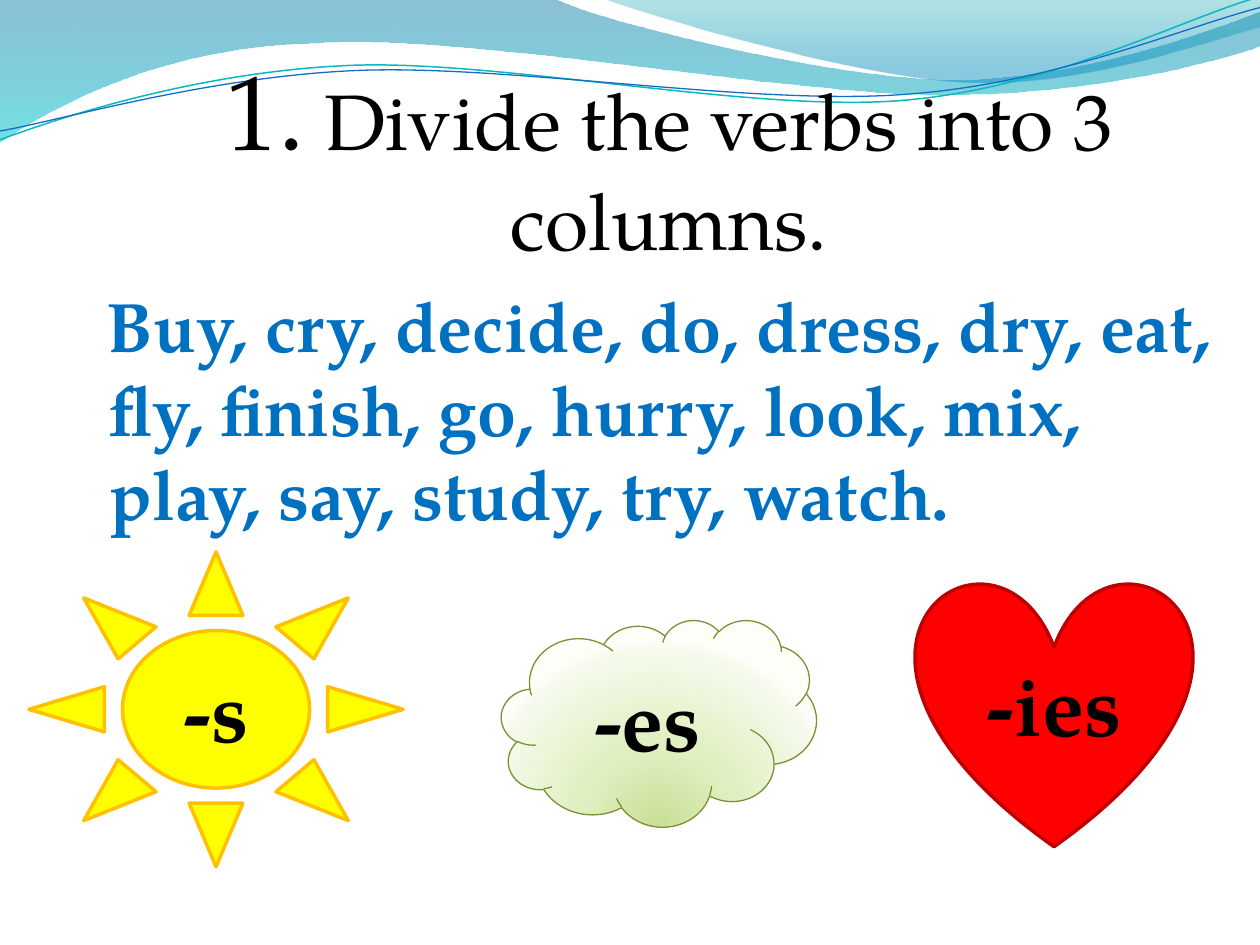
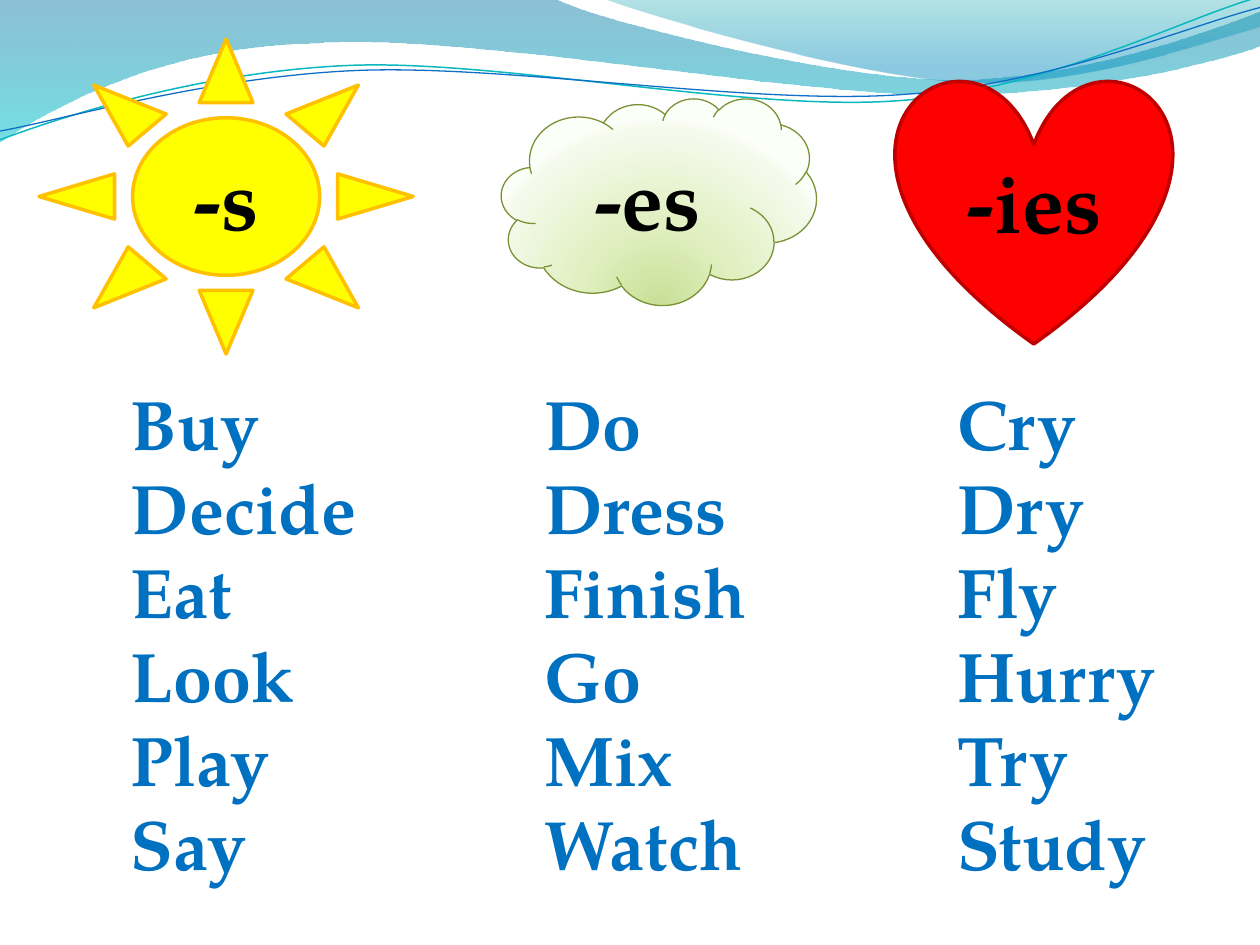
import pptx
import pptx.util
import pptx.dml.color
import pptx.enum.shapes
import pptx.enum.text
import pptx.oxml
import pptx.oxml.ns

RGB = pptx.dml.color.RGBColor
SHAPE = pptx.enum.shapes.MSO_SHAPE
ALIGN = pptx.enum.text.PP_ALIGN
ANCHOR = pptx.enum.text.MSO_ANCHOR
AUTO_SIZE = pptx.enum.text.MSO_AUTO_SIZE
NS = pptx.oxml.ns.nsdecls("a")
qn = pptx.oxml.ns.qn

PX = 9144
FONT = "TeX Gyre Pagella"
BLACK = RGB(0x00, 0x00, 0x00)
VERB_BLUE = RGB(0x00, 0x70, 0xC0)
SUN_YELLOW = RGB(0xFF, 0xFF, 0x00)
SUN_EDGE = RGB(0xFF, 0xC0, 0x00)
HEART_RED = RGB(0xFF, 0x00, 0x00)
HEART_EDGE = RGB(0xC0, 0x00, 0x00)
CLOUD_EDGE = RGB(0x7B, 0x91, 0x35)
TEAL_LINE = RGB(0x0A, 0xB8, 0xBF)
BLUE_LINE = RGB(0x0F, 0x6F, 0xC6)

LINEAR = '<a:lin ang="5400000" scaled="0"/>'
RADIAL = ('<a:path path="circle"><a:fillToRect l="50000" t="130000" '
          'r="50000" b="-30000"/></a:path>')
CLOUD_STOPS = [
    (0, RGB(0xC9, 0xDF, 0x97), 100),
    (43, RGB(0xE0, 0xF0, 0xC1), 100),
    (93, RGB(0xF5, 0xFA, 0xEC), 100),
    (100, RGB(0xFC, 0xFE, 0xF8), 100),
]

BANDS = [
    ([(0, 0), (440, -1), (476, 17, 664, 63, 758, 63),
      (853, 63, 958, 26, 1000, 9), (1001, 36),
      (983, 44, 870, 76, 746, 75), (622, 75, 382, 28, 257, 34),
      (129, 36, 46, 83, -1, 113)],
     [(0, RGB(0x00, 0x74, 0xA1), 45), (100, RGB(0x00, 0xC6, 0xCF), 55)]),
    ([(479, -1), (509, 11, 682, 62, 769, 65),
      (856, 69, 961, 32, 1000, 21), (1000, 0)],
     [(0, RGB(0x00, 0xA1, 0xA9), 30), (80, RGB(0x00, 0x8B, 0xBF), 45)]),
]
STRANDS = [
    ([(0, 111), (48, 93, 158, 57, 277, 52), (395, 47, 593, 89, 713, 80),
      (833, 71, 938, 15, 998, -2)], TEAL_LINE, 0.85),
    ([(0, 104), (47, 96, 164, 61, 283, 56), (403, 51, 597, 84, 717, 75),
      (836, 67, 941, 21, 1000, 6)], BLUE_LINE, 0.75),
]

VERBS = "Buy, cry, decide, do, dress, dry, eat, fly, finish, go, hurry, look, mix, play, say, study, try, watch."
COLUMNS = [
    (273, ["Buy", "Decide", "Eat", "Look", "Play", "Say"]),
    (234, ["Do", "Dress", "Finish", "Go", "Mix", "Watch"]),
    (203, ["Cry", "Dry", "Fly", "Hurry", "Try", "Study"]),
]


class Deck:
    def __init__(self):
        self.prs = pptx.Presentation()
        self.prs.slide_width = 1000 * PX
        self.prs.slide_height = 750 * PX
        self.layout = self.prs.slide_layouts[6]
        self.slide = None

    def add_slide(self):
        self.slide = self.prs.slides.add_slide(self.layout)

    def waves(self):
        for points, stops in BANDS:
            sp = self.outline(points, True)
            self.gradient(sp, stops, LINEAR)
            sp.line.fill.background()
            self.share(sp)
        for points, color, width in STRANDS:
            sp = self.outline(points, False)
            sp.fill.background()
            self.edge(sp, color, width)
            self.share(sp)

    def share(self, sp):
        self.layout.shapes._spTree.append(sp._element)

    def outline(self, points, close):
        ends = [seg[-2:] for seg in points]
        builder = self.slide.shapes.build_freeform(*ends[0], scale=PX)
        builder.add_line_segments(ends[1:], close=close)
        sp = builder.convert_to_shape()
        sp.shadow.inherit = False
        left = min(x for x, y in ends)
        top = min(y for x, y in ends)
        steps = list(next(sp._element.iter(qn("a:path"))))
        for seg, step in zip(points, steps):
            if len(seg) == 6:
                pts = "".join(f'<a:pt x="{x - left}" y="{y - top}"/>'
                              for x, y in zip(seg[::2], seg[1::2]))
                curve = pptx.oxml.parse_xml(
                    f'<a:cubicBezTo {NS}>{pts}</a:cubicBezTo>')
                step.getparent().replace(step, curve)
        return sp

    def gradient(self, sp, stops, direction):
        gs = "".join(
            f'<a:gs pos="{pos * 1000}"><a:srgbClr val="{color}">'
            f'<a:alpha val="{alpha * 1000}"/></a:srgbClr></a:gs>'
            for pos, color, alpha in stops)
        fill = pptx.oxml.parse_xml(
            f'<a:gradFill {NS} rotWithShape="1">'
            f'<a:gsLst>{gs}</a:gsLst>{direction}</a:gradFill>')
        sp.fill.background()
        spPr = sp._element.spPr
        spPr.replace(spPr.find(qn("a:noFill")), fill)

    def edge(self, sp, color, width):
        sp.line.color.rgb = color
        sp.line.width = pptx.util.Pt(width)

    def run(self, p, text, size, color, bold):
        r = p.add_run()
        r.text = text
        r.font.name = FONT
        r.font.size = pptx.util.Pt(size)
        r.font.bold = bold
        r.font.color.rgb = color

    def text_box(self, x, y, w, h):
        sp = self.slide.shapes.add_textbox(x * PX, y * PX, w * PX, h * PX)
        tf = sp.text_frame
        tf.word_wrap = True
        return tf

    def title(self, runs, x, y, w, h):
        tf = self.text_box(x, y, w, h)
        tf.margin_left = tf.margin_right = tf.margin_bottom = 0
        tf.margin_top = 5 * PX
        tf.vertical_anchor = ANCHOR.BOTTOM
        p = tf.paragraphs[0]
        p.alignment = ALIGN.CENTER
        for text, size in runs:
            self.run(p, text, size, BLACK, False)

    def verbs(self, lines, x, y, w, h):
        tf = self.text_box(x, y, w, h)
        for i, line in enumerate(lines):
            p = tf.add_paragraph() if i else tf.paragraphs[0]
            self.run(p, line, 40, VERB_BLUE, True)
        return tf

    def indent(self, p, left, first):
        pPr = p._p.get_or_add_pPr()
        pPr.set("marL", str(left * PX))
        pPr.set("indent", str(first * PX))

    def ending(self, kind, text, x, y, w, h, line, width):
        sp = self.slide.shapes.add_shape(kind, x * PX, y * PX, w * PX, h * PX)
        sp.shadow.inherit = False
        self.edge(sp, line, width)
        tf = sp.text_frame
        tf.word_wrap = True
        tf.vertical_anchor = ANCHOR.MIDDLE
        p = tf.paragraphs[0]
        p.alignment = ALIGN.CENTER
        self.run(p, text, 48, BLACK, True)
        return sp

    def solid(self, sp, color):
        sp.fill.solid()
        sp.fill.fore_color.rgb = color

    def sun(self, x, y):
        sp = self.ending(SHAPE.SUN, "-s", x, y, 297, 250, SUN_EDGE, 2)
        self.solid(sp, SUN_YELLOW)

    def cloud(self, x, y):
        sp = self.ending(SHAPE.CLOUD, "-es", x, y, 250, 164, CLOUD_EDGE, 0.75)
        self.gradient(sp, CLOUD_STOPS, RADIAL)

    def heart(self, x, y):
        sp = self.ending(SHAPE.HEART, "-ies", x, y, 219, 211, HEART_EDGE, 2)
        self.solid(sp, HEART_RED)


def main():
    deck = Deck()

    deck.add_slide()
    deck.waves()
    deck.title([("1.", 60.3), (" Divide the verbs into 3 columns.", 45)],
               62, 78, 938, 133)
    tf = deck.verbs([VERBS], 47, 219, 953, 258)
    deck.indent(tf.paragraphs[0], 30, -2)
    deck.cloud(398, 492)
    deck.sun(23, 438)
    deck.heart(727, 461)

    deck.add_slide()
    deck.sun(31, 31)
    deck.cloud(398, 78)
    deck.heart(711, 62)
    for i, (width, words) in enumerate(COLUMNS):
        tf = deck.verbs(words, 94 + 328 * i, 297, width, 414)
        tf.auto_size = AUTO_SIZE.SHAPE_TO_FIT_TEXT

    deck.prs.save("out.pptx")


if __name__ == "__main__":
    main()
